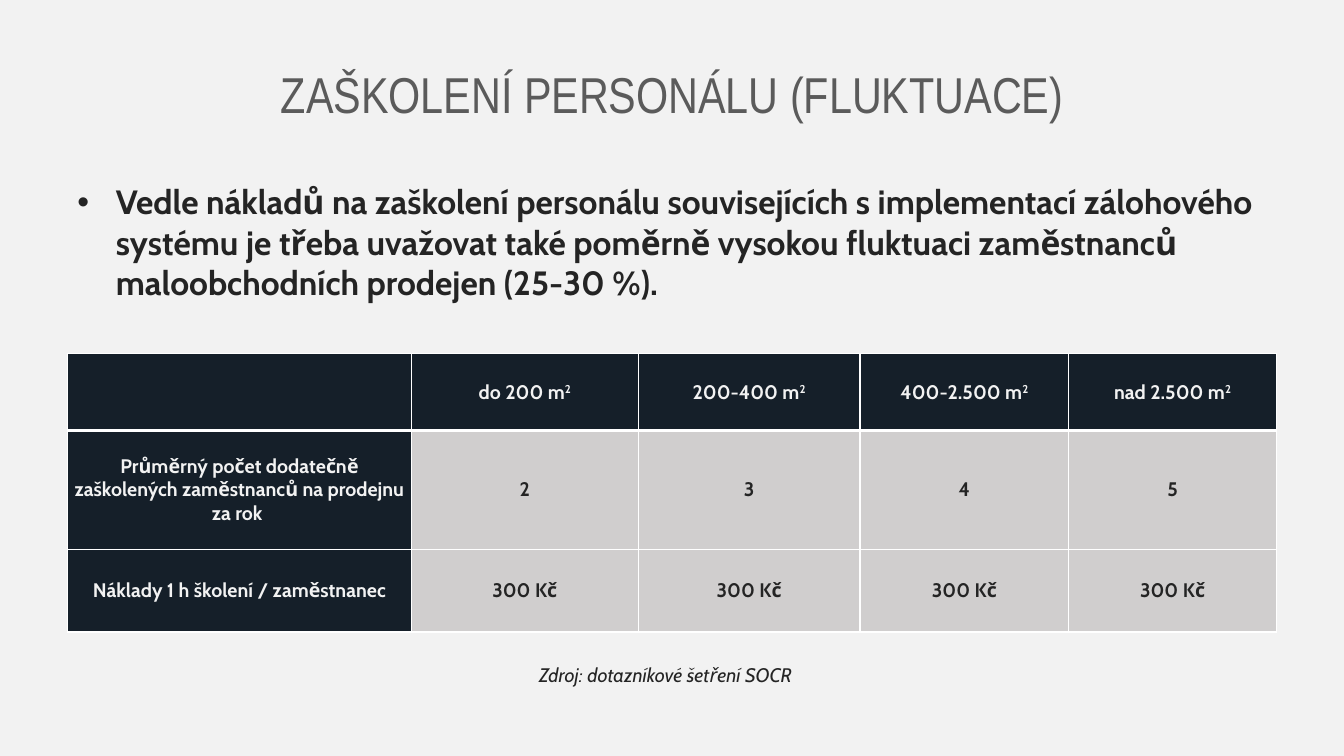
from lxml import etree
from pptx import Presentation
from pptx import util as u
from pptx.dml.color import RGBColor
from pptx.enum import text
from pptx.oxml.ns import qn

DARK, NAVY, GREY, LIGHT, WHITE = "242424", "151F29", "D0CECE", "F2F2F2", "FFFFFF"


def color(value):
    return RGBColor.from_string(value)


def add_run(paragraph, words, font_color, **formats):
    run = paragraph.add_run()
    run.text = words
    run.font.color.rgb = color(font_color)
    for name, value in formats.items():
        setattr(run.font, name, value)
    return run


presentation = Presentation()
presentation.slide_width = u.Inches(13.33)
presentation.slide_height = u.Inches(7.5)
slide = presentation.slides.add_slide(presentation.slide_layouts[6])
slide.background.fill.solid()
slide.background.fill.fore_color.rgb = color(LIGHT)

text_boxes = [
    ((0.67, 0.3, 12, 1.25), "ZAŠKOLENÍ PERSONÁLU (FLUKTUACE)", "5B5B5B",
     {"name": "Arial Narrow", "size": u.Pt(36)},
     text.MSO_ANCHOR.MIDDLE, text.PP_ALIGN.CENTER, False),
    ((0.67, 1.75, 12, 4.95),
     "Vedle nákladů na zaškolení personálu souvisejících s implementací zálohového "
     "systému je třeba uvažovat také poměrně vysokou fluktuaci zaměstnanců "
     "maloobchodních prodejen (25-30 %).", DARK,
     {"name": "Cabin", "size": u.Pt(24), "bold": True},
     text.MSO_ANCHOR.TOP, text.PP_ALIGN.LEFT, True),
    ((5.25, 6.53, 2.84, 0.34), "Zdroj: dotazníkové šetření SOCR", DARK,
     {"name": "Cabin", "size": u.Pt(14), "italic": True},
     text.MSO_ANCHOR.TOP, text.PP_ALIGN.LEFT, False),
]
for box, words, font_color, formats, anchor, alignment, bulleted in text_boxes:
    shape = slide.shapes.add_textbox(*map(u.Inches, box))
    shape.text_frame.word_wrap = True
    shape.text_frame.vertical_anchor = anchor
    paragraph = shape.text_frame.paragraphs[0]
    paragraph.alignment = alignment
    if bulleted:
        properties = paragraph._p.get_or_add_pPr()
        properties.set("marL", str(u.Inches(0.38)))
        properties.set("indent", str(-u.Inches(0.38)))
        etree.SubElement(properties, qn("a:buFont")).set("typeface", "Arial")
        etree.SubElement(properties, qn("a:buChar")).set("char", "•")
    add_run(paragraph, words, font_color, **formats)

rows = [
    ["", "do 200 m", "200-400 m", "400-2.500 m", "nad 2.500 m"],
    ["Průměrný počet dodatečně zaškolených zaměstnanců na prodejnu za rok ", "2", "3", "4", "5"],
    ["Náklady 1 h školení / zaměstnanec"] + ["300 Kč"] * 4,
]
column_widths = [3.41, 2.25, 2.2, 2.07, 2.06]
row_heights = [0.76, 1.18, 0.82]
cell_format = {"name": "Cabin", "size": u.Pt(14), "bold": True}

table = slide.shapes.add_table(
    len(rows), len(column_widths), *map(u.Inches, (0.67, 3.51, 12, 2.76))).table
for column, width in zip(table.columns, column_widths):
    column.width = u.Inches(width)
for row, height in zip(table.rows, row_heights):
    row.height = u.Inches(height)

for row_index, row in enumerate(rows):
    for column_index, words in enumerate(row):
        cell = table.cell(row_index, column_index)
        is_header = row_index == 0 or column_index == 0
        cell.fill.solid()
        cell.fill.fore_color.rgb = color(NAVY if is_header else GREY)
        cell.vertical_anchor = text.MSO_ANCHOR.MIDDLE
        cell.margin_left = cell.margin_right = u.Inches(0.07 if row_index else 0.01)
        cell.margin_top = u.Inches(0 if row_index else 0.01)
        cell.margin_bottom = 0
        border_widths = {"lnL": 1, "lnR": 1, "lnT": 3 if row_index == 1 else 1,
                         "lnB": 1 if row_index else 3}
        for position, (side, width) in enumerate(border_widths.items()):
            border = etree.Element(qn(f"a:{side}"), w=str(u.Pt(width)))
            fill = etree.SubElement(border, qn("a:solidFill"))
            etree.SubElement(fill, qn("a:srgbClr")).set("val", WHITE)
            cell._tc.get_or_add_tcPr().insert(position, border)
        if words:
            font_color = LIGHT if is_header else DARK
            paragraph = cell.text_frame.paragraphs[0]
            paragraph.alignment = text.PP_ALIGN.CENTER
            add_run(paragraph, words, font_color, **cell_format)
            if row_index == 0:
                exponent = add_run(paragraph, "2", font_color, **cell_format)
                exponent._r.get_or_add_rPr().set("baseline", "30000")

presentation.save("out.pptx")
